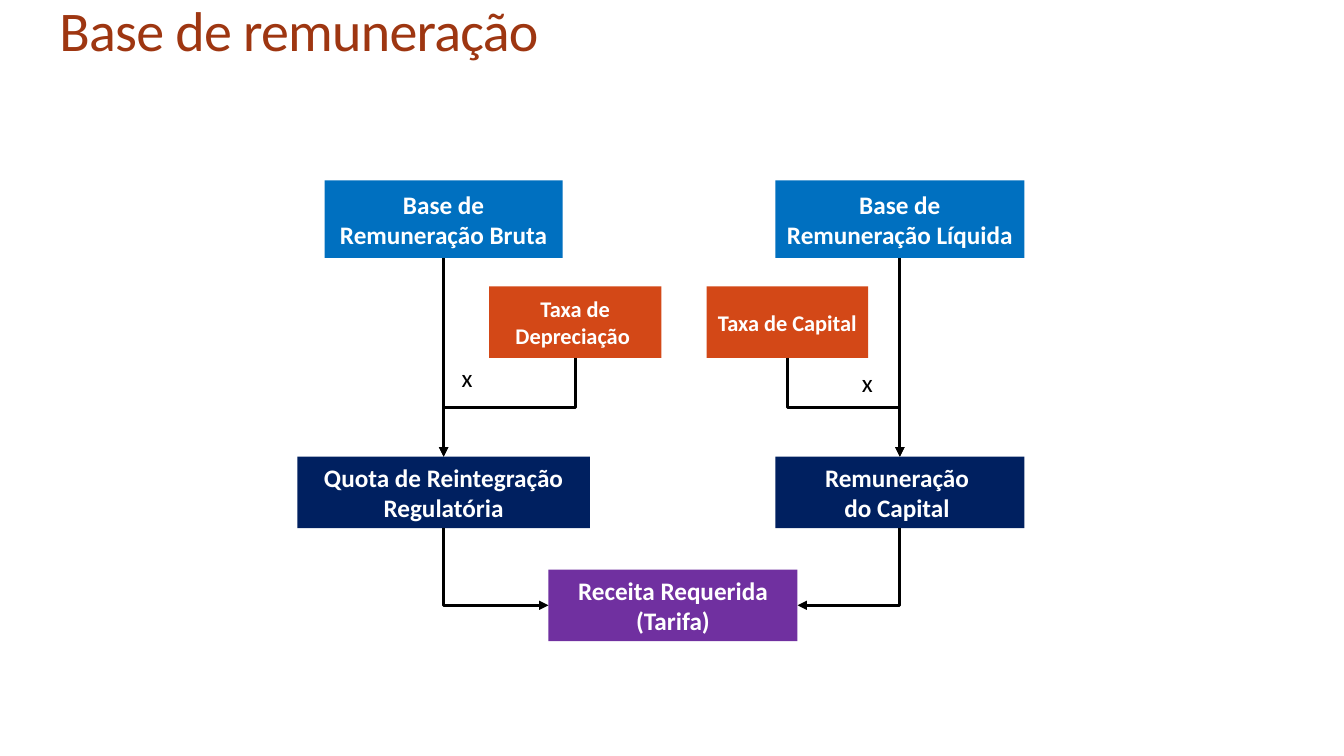
from pptx import Presentation
from pptx.dml.color import RGBColor
from pptx.enum.shapes import MSO_CONNECTOR, MSO_SHAPE
from pptx.enum.text import MSO_ANCHOR, PP_ALIGN
from pptx.oxml.ns import qn
from pptx.util import Inches, Pt
from lxml import etree

RECTANGLE = MSO_SHAPE.RECTANGLE
STRAIGHT, ELBOW = MSO_CONNECTOR.STRAIGHT, MSO_CONNECTOR.ELBOW
MIDDLE, CENTER = MSO_ANCHOR.MIDDLE, PP_ALIGN.CENTER
TOP, LEFT, BOTTOM, RIGHT = range(4)

FONT = "Calibri"
COLORS = {
    "base": "0070C0", "rate": "D34817", "result": "002060", "revenue": "7030A0",
    "title": "9E3611", "white": "FFFFFF", "black": "000000",
}

# Content: name -> (text, color, size, left, top, width, height)
BOXES = {
    "gross": ("Base de Remuneração Bruta", "base", 18, 3.22, 1.79, 2.36, 0.77),
    "net": ("Base de Remuneração Líquida", "base", 18, 7.69, 1.79, 2.47, 0.77),
    "depreciation": ("Taxa de Depreciação ", "rate", 16, 4.85, 2.84, 1.71, 0.71),
    "capital_rate": ("Taxa de Capital", "rate", 16, 7.01, 2.84, 1.6, 0.71),
    "quota": ("Quota de Reintegração Regulatória", "result", 18, 2.95, 4.53, 2.9, 0.71),
    "return": ("Remuneração \ndo Capital ", "result", 18, 7.69, 4.53, 2.47, 0.71),
    "revenue": ("Receita Requerida (Tarifa)", "revenue", 18, 5.44, 5.65, 2.47, 0.71),
}
# (from, to, side entered, preset of a bent arrow or None for a straight one)
ARROWS = [
    ("gross", "quota", TOP, None),
    ("net", "return", TOP, None),
    ("depreciation", "quota", TOP, "bentConnector3"),
    ("capital_rate", "return", TOP, "bentConnector3"),
    ("quota", "revenue", LEFT, "bentConnector2"),
    ("return", "revenue", RIGHT, "bentConnector2"),
]
# (text, size, color, left, top, width, height, wrap)
LABELS = [
    ("x", 18, "black", 4.48, 3.55, 0.31, 0.4, False),
    ("x", 18, "black", 8.45, 3.59, 0.31, 0.4, False),
    ("Base de remuneração", 40, "title", 0.49, 0.01, 12.38, 0.43, True),
]


def rgb(name):
    return RGBColor.from_string(COLORS[name])


def style_text(text_frame, size, color, bold=False, align=None):
    for paragraph in text_frame.paragraphs:
        paragraph.alignment = align
        for run in paragraph.runs:
            run.font.name = FONT
            run.font.size = Pt(size)
            run.font.bold = bold
            run.font.color.rgb = rgb(color)


def add_box(slide, text, color, size, *bounds):
    shape = slide.shapes.add_shape(RECTANGLE, *map(Inches, bounds))
    shape.shadow.inherit = False
    shape.fill.solid()
    shape.fill.fore_color.rgb = rgb(color)
    shape.line.fill.background()
    text_frame = shape.text_frame
    text_frame.word_wrap = True
    text_frame.vertical_anchor = MIDDLE
    text_frame.text = text
    style_text(text_frame, size, "white", True, CENTER)
    return shape


def bend_downwards(connector, preset):
    """Turn the connector so that it leaves its start vertically."""
    start_x, start_y = connector.begin_x, connector.begin_y
    end_x, end_y = connector.end_x, connector.end_y
    length, breadth = end_y - start_y, abs(end_x - start_x)
    connector.left = (start_x + end_x - length) // 2
    connector.top = (start_y + end_y - breadth) // 2
    connector.width, connector.height = length, breadth
    to_right = end_x > start_x
    properties = connector._element.spPr
    transform = properties.find(qn("a:xfrm"))
    transform.set("rot", str((270 if to_right else 90) * 60000))
    transform.set("flipH", "1" if to_right else "0")
    transform.set("flipV", "0")
    properties.find(qn("a:prstGeom")).set("prst", preset)


def add_arrow(slide, source, target, side, preset):
    connector = slide.shapes.add_connector(ELBOW if preset else STRAIGHT, 0, 0, 0, 0)
    connector.begin_connect(source, BOTTOM)
    connector.end_connect(target, side)
    if preset:
        bend_downwards(connector, preset)
    connector.line.color.rgb = rgb("black")
    connector.line.width = Pt(2.25)
    properties = connector._element.spPr
    etree.SubElement(properties.find(qn("a:ln")), qn("a:tailEnd"), type="triangle")
    etree.SubElement(properties, qn("a:effectLst"))


def add_label(slide, text, size, color, left, top, width, height, wrap):
    label = slide.shapes.add_textbox(*map(Inches, (left, top, width, height)))
    label.text_frame.word_wrap = wrap
    label.text_frame.text = text
    style_text(label.text_frame, size, color)
    return label


def main():
    presentation = Presentation()
    presentation.slide_width, presentation.slide_height = Inches(13.33), Inches(7.5)
    slide = presentation.slides.add_slide(presentation.slide_layouts[6])

    # Boxes and the arrows between them
    shapes = {name: add_box(slide, *box) for name, box in BOXES.items()}
    for source, target, side, preset in ARROWS:
        add_arrow(slide, shapes[source], shapes[target], side, preset)

    # Multiplication signs and title
    labels = [add_label(slide, *label) for label in LABELS]
    title = labels[-1].text_frame.paragraphs[0]
    title.line_spacing = 0.85
    title.runs[0].font._element.set("spc", "-50")

    presentation.save("out.pptx")


if __name__ == "__main__":
    main()
